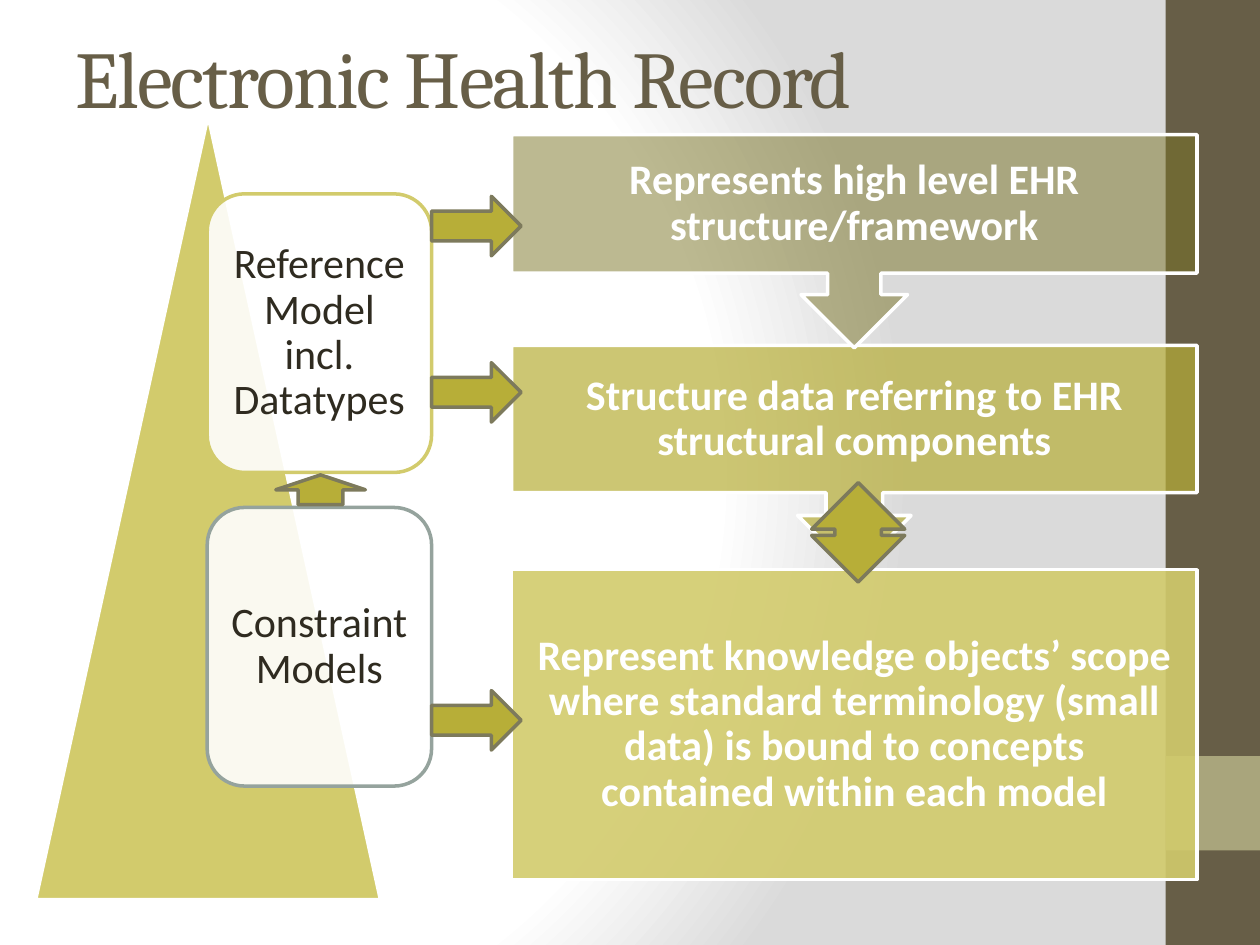
from dataclasses import dataclass

from lxml.etree import SubElement
from pptx import Presentation
from pptx.dml.color import RGBColor
from pptx.enum.shapes import MSO_SHAPE
from pptx.enum.text import MSO_ANCHOR, PP_ALIGN
from pptx.oxml import parse_xml
from pptx.oxml.ns import nsdecls, qn
from pptx.util import Pt


@dataclass(frozen=True)
class Theme:
    heading_font: str = "Cambria"
    body_font: str = "Calibri"
    title_size: int = 46
    body_size: int = 24
    line_width: int = 2
    brown: str = "675E47"
    tan: str = "A9A57C"
    white: str = "FFFFFF"
    grey: str = "DADADA"
    ink: str = "2F2B20"
    lime: str = "D2CB6C"
    olive: str = "B7AE38"
    dark_olive: str = "7A7425"
    arrow_line: str = "7D7A5C"
    sage: str = "95A39D"


THEME = Theme()
SLIDE_WIDTH, SLIDE_HEIGHT = 720, 540
TITLE = "Electronic Health Record"

SIDEBAR = [(0, SLIDE_HEIGHT, THEME.brown), (432, 54, THEME.tan)]
SIDEBAR_LEFT, SIDEBAR_WIDTH = 666, 54

PANEL_LEFT, PANEL_WIDTH, PANEL_INSET = 292.4, 391.6, 13.4
PANELS = [
    ("Represents high level EHR structure/framework",
     MSO_SHAPE.DOWN_ARROW_CALLOUT, 77, 121.8, THEME.dark_olive, 50),
    ("Structure data referring to EHR structural components",
     MSO_SHAPE.DOWN_ARROW_CALLOUT, 197.4, 129.6, THEME.olive, 70),
    ("Represent knowledge objects’ scope where standard terminology (small data) "
     "is bound to concepts contained within each model",
     MSO_SHAPE.RECTANGLE, 325.6, 177, THEME.lime, 90),
]

TRIANGLE = (20.4, 66.2, 197, 448)
CARD_LEFT, CARD_WIDTH, CARD_HEIGHT, CARD_INSET = 118.4, 128.2, 159.2, 7
CARDS = [
    ("Reference Model incl. Datatypes", 110.8, THEME.lime),
    ("Constraint Models", 290, THEME.sage),
]

ARROW_LENGTH, ARROW_BREADTH = 51.2, 34
RIGHT_ARROW_TOPS = [112.2, 207.2, 394.6]
ARROWS = [
    (MSO_SHAPE.RIGHT_ARROW, CARD_LEFT + CARD_WIDTH, top, ARROW_LENGTH, ARROW_BREADTH)
    for top in RIGHT_ARROW_TOPS
] + [
    (MSO_SHAPE.UP_ARROW, 157.6, 271.4, ARROW_LENGTH, 17),
    (MSO_SHAPE.UP_DOWN_ARROW, 463.8, 275.8, 53.2, 56.8),
]


def set_background(slide):
    """Fill the slide with a circular gradient from white to grey."""
    stops = [(0, THEME.white), (75, THEME.white), (100, THEME.grey)]
    stop_xml = "".join(
        f'<a:gs pos="{position * 1000}"><a:srgbClr val="{color}"/></a:gs>'
        for position, color in stops
    )
    slide.element.cSld.insert(0, parse_xml(
        f'<p:bg {nsdecls("p", "a")}><p:bgPr><a:gradFill rotWithShape="1">'
        f'<a:gsLst>{stop_xml}</a:gsLst><a:path path="circle">'
        '<a:fillToRect l="20000" t="50000" r="100000" b="50000"/></a:path>'
        '</a:gradFill><a:effectLst/></p:bgPr></p:bg>'
    ))


def add_shape(slide, kind, left, top, width, height, fill, line=None, opacity=100):
    """Add a flat preset shape with an optional outline and opacity."""
    shape = slide.shapes.add_shape(kind, Pt(left), Pt(top), Pt(width), Pt(height))
    shape.shadow.inherit = False
    shape.fill.solid()
    shape.fill.fore_color.rgb = RGBColor.from_string(fill)
    if opacity < 100:
        color = shape.element.spPr.find(qn("a:solidFill")).find(qn("a:srgbClr"))
        SubElement(color, qn("a:alpha")).set("val", str(opacity * 1000))
    if line:
        shape.line.color.rgb = RGBColor.from_string(line)
        shape.line.width = Pt(THEME.line_width)
    else:
        shape.line.fill.background()
    return shape


def write_text(shape, text, color, inset, bold=False):
    """Write one centred paragraph inside a shape."""
    frame = shape.text_frame
    frame.word_wrap = True
    frame.vertical_anchor = MSO_ANCHOR.MIDDLE
    frame.margin_left = frame.margin_right = Pt(inset)
    frame.margin_top = frame.margin_bottom = Pt(inset)
    paragraph = frame.paragraphs[0]
    paragraph.alignment = PP_ALIGN.CENTER
    paragraph.line_spacing = 0.9
    add_run(paragraph, text, THEME.body_font, THEME.body_size, color, bold)


def add_run(paragraph, text, font, size, color, bold=False):
    """Add a formatted run to a paragraph."""
    run = paragraph.add_run()
    run.text = text
    run.font.name = font
    run.font.size = Pt(size)
    run.font.bold = bold
    run.font.color.rgb = RGBColor.from_string(color)
    return run


def add_title(slide):
    """Add the slide heading."""
    frame = slide.shapes.add_textbox(Pt(36), Pt(21.6), Pt(648), Pt(44)).text_frame
    frame.word_wrap = True
    frame.vertical_anchor = MSO_ANCHOR.MIDDLE
    run = add_run(frame.paragraphs[0], TITLE, THEME.heading_font,
                  THEME.title_size, THEME.brown)
    run.font._element.set("spc", "-100")


def main():
    """Build and save the slide."""
    presentation = Presentation()
    presentation.slide_width = Pt(SLIDE_WIDTH)
    presentation.slide_height = Pt(SLIDE_HEIGHT)
    slide = presentation.slides.add_slide(presentation.slide_layouts[6])
    set_background(slide)
    for top, height, color in SIDEBAR:
        add_shape(slide, MSO_SHAPE.RECTANGLE, SIDEBAR_LEFT, top,
                  SIDEBAR_WIDTH, height, color)
    add_title(slide)
    for text, kind, top, height, color, opacity in reversed(PANELS):
        panel = add_shape(slide, kind, PANEL_LEFT, top, PANEL_WIDTH, height,
                          color, THEME.white, opacity)
        write_text(panel, text, THEME.white, PANEL_INSET, bold=True)
    add_shape(slide, MSO_SHAPE.ISOSCELES_TRIANGLE, *TRIANGLE, THEME.lime, THEME.white)
    for text, top, line in CARDS:
        card = add_shape(slide, MSO_SHAPE.ROUNDED_RECTANGLE, CARD_LEFT, top,
                         CARD_WIDTH, CARD_HEIGHT, THEME.white, line, 90)
        write_text(card, text, THEME.ink, CARD_INSET)
    for arrow in ARROWS:
        add_shape(slide, *arrow, THEME.olive, THEME.arrow_line)
    presentation.save("out.pptx")


if __name__ == "__main__":
    main()
